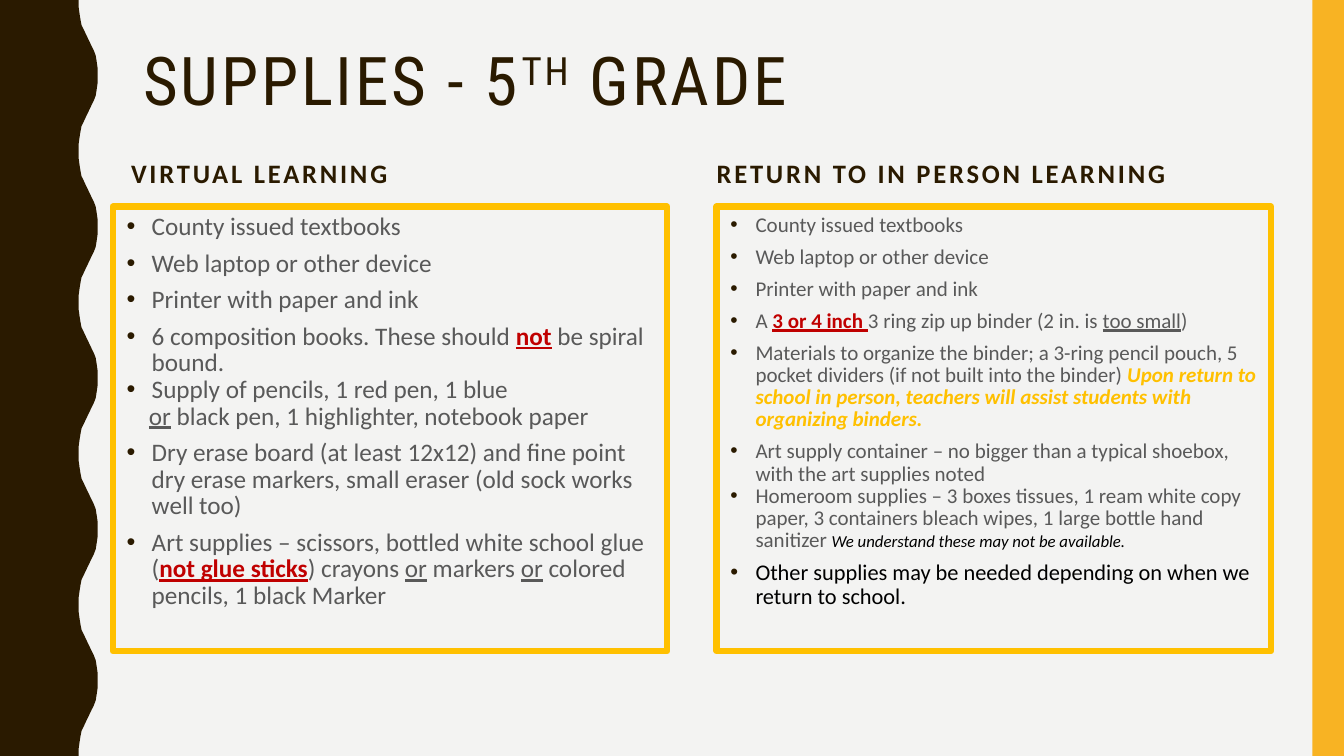
from dataclasses import dataclass
from lxml.etree import SubElement
from pptx import Presentation
from pptx.dml.color import RGBColor
from pptx.enum.shapes import MSO_SHAPE
from pptx.enum.text import MSO_ANCHOR, PP_ALIGN
from pptx.oxml.ns import qn
from pptx.util import Pt


@dataclass(frozen=True)
class Theme:
    page: str = "F3F3F2"
    dark: str = "2A1A00"
    band: str = "F8B323"
    gold: str = "FFC000"
    gray: str = "595959"
    red: str = "C00000"
    black: str = "000000"
    display: str = "Roboto Condensed"
    body: str = "Calibri"
    title: int = 48
    head: int = 19
    large: int = 18
    small: int = 15
    note: int = 12
    last: int = 16


THEME = Theme()
WIDE, HIGH = 960, 540
WAVE = [(56.2, 0), (56.2, 5), (56.9, 10), (57.6, 14.4), (58.3, 18), (59.8, 21),
        (61.2, 24), (64.1, 30), (65.5, 33), (67, 36), (68.4, 39.6), (69.1, 44),
        (69.8, 49), (69.8, 54)]
STYLES = {
    "plain": {},
    "under": {"under": True},
    "alert": {"color": THEME.red, "bold": True, "under": True},
    "gold": {"color": THEME.gold, "bold": True, "ital": True},
    "note": {"color": THEME.black, "ital": True, "size": THEME.note},
    "last": {"color": THEME.black, "size": THEME.last},
}
HOME = [
    ("bullet", [("County issued textbooks", "plain")]),
    ("bullet", [("Web laptop or other device", "plain")]),
    ("bullet", [("Printer with paper and ink", "plain")]),
    ("bullet", [("6 composition books. These should ", "plain"), ("not", "alert"),
                (" be spiral bound.", "plain")]),
    ("tight", [("Supply of pencils, 1 red pen, 1 blue", "plain")]),
    ("follow", [("or", "under"),
                (" black pen, 1 highlighter, notebook paper", "plain")]),
    ("bullet", [("Dry erase board (at least 12x12) and fine point dry erase markers, "
                 "small eraser (old sock works well too)", "plain")]),
    ("bullet", [("Art supplies – scissors, bottled white school glue (", "plain"),
                ("not glue sticks", "alert"), (") crayons ", "plain"),
                ("or", "under"), (" markers ", "plain"), ("or", "under"),
                (" colored pencils, 1 black Marker", "plain")]),
]
SCHOOL = [
    ("bullet", [("County issued textbooks", "plain")]),
    ("bullet", [("Web laptop or other device", "plain")]),
    ("bullet", [("Printer with paper and ink", "plain")]),
    ("bullet", [("A ", "plain"), ("3 or 4 inch ", "alert"),
                ("3 ring zip up binder (2 in. is ", "plain"),
                ("too small", "under"), (")", "plain")]),
    ("bullet", [("Materials to organize the binder; a 3-ring pencil pouch, 5 pocket "
                 "dividers (if not built into the binder) ", "plain"),
                ("Upon return to school in person, teachers will assist students "
                 "with organizing binders.", "gold")]),
    ("bullet", [("Art supply container – no bigger than a typical shoebox, "
                 "with the art supplies noted", "plain")]),
    ("tight", [("Homeroom supplies – 3 boxes tissues, 1 ream white copy paper, "
                "3 containers bleach wipes, 1 large bottle hand sanitizer ", "plain"),
               ("We understand these may not be available.", "note")]),
    ("bullet", [("Other supplies may be needed depending on when we "
                 "return to school.", "last")]),
]


def paint(fill, color):
    fill.solid()
    fill.fore_color.rgb = RGBColor.from_string(color)


def style(run, size, color, face=THEME.body, bold=False, ital=False,
          under=False, track=0, lift=0):
    font = run.font
    font.size, font.name = Pt(size), face
    font.bold, font.italic, font.underline = bold, ital, under
    font.color.rgb = RGBColor.from_string(color)
    props = run._r.get_or_add_rPr()
    if track:
        props.set("spc", str(track * 100))
    if lift:
        props.set("baseline", str(lift * 1000))


def frame(shape, anchor):
    text = shape.text_frame
    text.word_wrap = True
    text.vertical_anchor = anchor
    text.margin_left = text.margin_right = Pt(3.6)
    text.margin_top = text.margin_bottom = Pt(3.6)
    return text


def place(box):
    return [Pt(side) for side in box]


def add_edges(slide):
    half = 54
    curve = []
    for top in range(0, HIGH, 2 * half):
        curve += [(x, top + y) for x, y in WAVE]
        curve += [(x, top + 2 * half - y) for x, y in WAVE[-2::-1]]
    points = [(Pt(x), Pt(y)) for x, y in curve + [(0, HIGH)]]
    pen = slide.shapes.build_freeform(0, 0, scale=1.0)
    pen.add_line_segments(points, close=True)
    wave = pen.convert_to_shape()
    side = 22.5
    bar = slide.shapes.add_shape(MSO_SHAPE.RECTANGLE,
                                 *place((WIDE - side, 0, side, HIGH)))
    for shape, color in ((wave, THEME.dark), (bar, THEME.band)):
        paint(shape.fill, color)
        shape.line.fill.background()
        shape.shadow.inherit = False


def add_title(slide, box):
    title = slide.shapes.title
    title.left, title.top, title.width, title.height = place(box)
    para = frame(title, MSO_ANCHOR.TOP).paragraphs[0]
    para.alignment, para.line_spacing = PP_ALIGN.LEFT, 0.9
    for words, lift in (("SUPPLIES - 5", 0), ("TH", 30), (" GRADE", 0)):
        run = para.add_run()
        run.text = words
        style(run, THEME.title, THEME.dark, THEME.display, track=2, lift=lift)


def add_head(slide, box, words):
    para = frame(slide.shapes.add_textbox(*place(box)), MSO_ANCHOR.BOTTOM).paragraphs[0]
    para.text = words
    para.space_before = Pt(7)
    style(para.runs[0], THEME.head, THEME.dark, bold=True, track=2)


def add_item(para, kind, parts, size):
    para.line_spacing = 0.88
    para.space_before = Pt(7 if kind == "bullet" else 0)
    props = para._p.get_or_add_pPr()
    if kind == "follow":
        props.set("marL", str(Pt(16)))
    else:
        props.set("marL", str(Pt(18)))
        props.set("indent", str(-Pt(18)))
        tint = SubElement(props, qn("a:buClr"))
        SubElement(tint, qn("a:srgbClr")).set("val", THEME.dark)
        SubElement(props, qn("a:buFont")).set("typeface", "Arial")
        SubElement(props, qn("a:buChar")).set("char", "•")
    for words, name in parts:
        run = para.add_run()
        run.text = words
        style(run, **{"size": size, "color": THEME.gray, **STYLES[name]})


def add_list(slide, box, items, size):
    left, top, width, height = box
    group = slide.shapes.add_group_shape()
    panel = group.shapes.add_shape(MSO_SHAPE.RECTANGLE, *place(box))
    panel.fill.background()
    paint(panel.line.fill, THEME.gold)
    panel.line.width = Pt(4.5)
    panel.shadow.inherit = False
    inner = (left + 6.2, top + 2.2, width - 11.5, height - 4)
    text = frame(group.shapes.add_textbox(*place(inner)), MSO_ANCHOR.TOP)
    for spot, (kind, parts) in enumerate(items):
        para = text.add_paragraph() if spot else text.paragraphs[0]
        add_item(para, kind, parts, size)


def main():
    deck = Presentation()
    deck.slide_width, deck.slide_height = Pt(WIDE), Pt(HIGH)
    slide = deck.slides.add_slide(deck.slide_layouts[5])
    paint(slide.background.fill, THEME.page)
    add_edges(slide)
    add_title(slide, (98.6, 30.2, 801.4, 117.4))
    add_head(slide, (90, 88.6, 378, 49.7), "VIRTUAL LEARNING")
    add_list(slide, (80.6, 147.6, 396, 317.5), HOME, THEME.large)
    add_head(slide, (508.3, 88.6, 424, 49.7), "RETURN TO IN PERSON LEARNING")
    add_list(slide, (511.9, 147.6, 396, 317.5), SCHOOL, THEME.small)
    deck.save("out.pptx")


if __name__ == "__main__":
    main()
